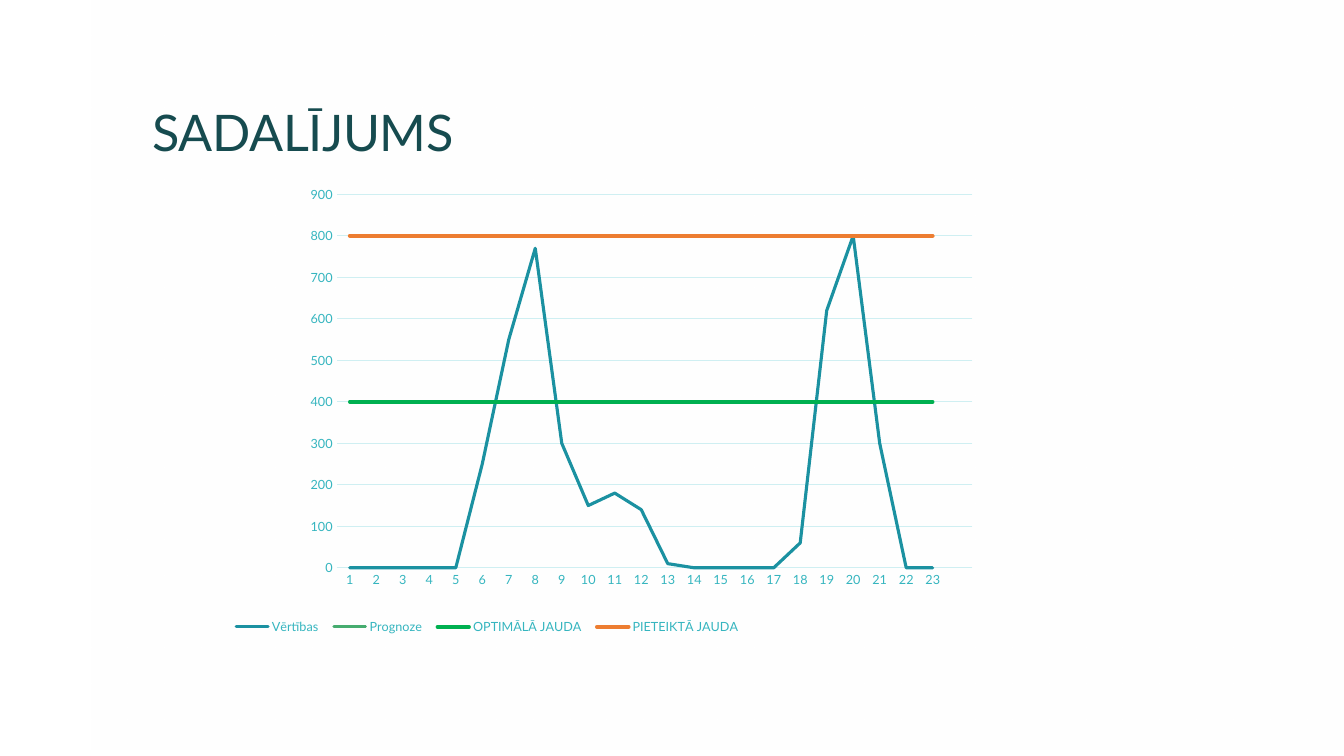
from dataclasses import dataclass

from lxml import etree
from pptx import Presentation
from pptx.chart.data import CategoryChartData
from pptx.dml.color import RGBColor
from pptx.enum.chart import XL_CHART_TYPE, XL_LEGEND_POSITION, XL_TICK_MARK
from pptx.enum.shapes import MSO_SHAPE
from pptx.enum.text import MSO_ANCHOR, PP_ALIGN
from pptx.oxml.ns import qn
from pptx.util import Cm, Pt

LINE_CHART = XL_CHART_TYPE.LINE
LEGEND_BOTTOM = XL_LEGEND_POSITION.BOTTOM
NO_TICKS = XL_TICK_MARK.NONE
RECTANGLE = MSO_SHAPE.RECTANGLE
ANCHOR_BOTTOM = MSO_ANCHOR.BOTTOM
ALIGN_LEFT = PP_ALIGN.LEFT

FONT = "Lato"
COLORS = {
    "white": "FFFFFF",
    "dark_teal": "164B4F",
    "label": "35B5BF",
    "grid": "CFEFF2",
    "values": "1B91A1",
    "forecast": "46AC6F",
    "optimal": "00B050",
    "declared": "ED7D31",
}
HOURS = 24
MEASURED_HOURS = 23


@dataclass
class PowerSeries:
    name: str
    values: list
    color: str
    width: float


POWER_SERIES = [
    PowerSeries("Vērtības",
                [0, 0, 0, 0, 0, 250, 550, 770, 300, 150, 180, 140,
                 10, 0, 0, 0, 0, 60, 620, 800, 300, 0, 0, None],
                "values", 2.25),
    PowerSeries("Prognoze", [None] * HOURS, "forecast", 2),
    PowerSeries("OPTIMĀLĀ JAUDA", [400] * MEASURED_HOURS + [None], "optimal", 2.5),
    PowerSeries("PIETEIKTĀ JAUDA", [800] * MEASURED_HOURS + [None], "declared", 2.75),
]


def rgb(color: str) -> RGBColor:
    return RGBColor.from_string(COLORS[color])


def style_font(font, size: float, color: str) -> None:
    for attribute, value in {"name": FONT, "size": Pt(size), "bold": False}.items():
        setattr(font, attribute, value)
    font.color.rgb = rgb(color)


def style_line(line, color: str, width: float) -> None:
    line.color.rgb = rgb(color)
    line.width = Pt(width)


def place_inside_chart(parent, index: int, settings: dict) -> None:
    """Give a chart part a manual layout in fractions of the chart."""
    for old_layout in parent.findall(qn("c:layout")):
        parent.remove(old_layout)
    layout = etree.Element(qn("c:layout"))
    manual = etree.SubElement(layout, qn("c:manualLayout"))
    for tag, value in settings.items():
        etree.SubElement(manual, qn(f"c:{tag}")).set("val", str(value))
    parent.insert(index, layout)


def add_veil(slide) -> None:
    veil = slide.shapes.add_shape(RECTANGLE, Cm(2.31), Cm(0), Cm(31.55), Cm(19.05))
    veil.shadow.inherit = False
    veil.line.fill.background()
    veil.fill.gradient()
    veil.fill.gradient_angle = 270
    for stop in veil.fill.gradient_stops:
        stop.color.rgb = rgb("white")
    for color, opacity in zip(veil.fill._xPr.iter(qn("a:srgbClr")), (60, 0)):
        etree.SubElement(color, qn("a:alpha")).set("val", str(opacity * 1000))


def add_title(slide, text: str) -> None:
    title = slide.shapes.add_textbox(Cm(3.6), Cm(1.05), Cm(28.14), Cm(3.18))
    frame = title.text_frame
    for attribute, value in {"word_wrap": True, "vertical_anchor": ANCHOR_BOTTOM}.items():
        setattr(frame, attribute, value)
    paragraph = frame.paragraphs[0]
    for attribute, value in {"alignment": ALIGN_LEFT, "line_spacing": 0.9}.items():
        setattr(paragraph, attribute, value)
    run = paragraph.add_run()
    run.text = text
    style_font(run.font, 36, "dark_teal")
    run.font._element.set("spc", "-30")


def add_power_chart(slide) -> None:
    data = CategoryChartData()
    # The last hour has neither a label nor values
    data.categories = [str(hour) for hour in range(1, MEASURED_HOURS + 1)] + [""]
    for series in POWER_SERIES:
        data.add_series(series.name, series.values)
    chart = slide.shapes.add_chart(
        LINE_CHART, Cm(5.67), Cm(4.52), Cm(24.03), Cm(11.81), data).chart
    chart.has_title = False
    style_font(chart.font, 10, "dark_teal")

    # Series lines
    chart.plots[0].vary_by_categories = False
    for drawn, series in zip(chart.plots[0].series, POWER_SERIES):
        drawn.smooth = False
        style_line(drawn.format.line, series.color, series.width)
        drawn.format.line._get_or_add_ln().set("cap", "rnd")

    # Axes
    hour_axis, power_axis = chart.category_axis, chart.value_axis
    for axis in (hour_axis, power_axis):
        for attribute in ("major_tick_mark", "minor_tick_mark"):
            setattr(axis, attribute, NO_TICKS)
        style_font(axis.tick_labels.font, 9, "label")
    style_line(hour_axis.format.line, "grid", 0.75)
    power_axis.format.line.fill.background()
    for attribute, value in {"minimum_scale": 0, "maximum_scale": 900,
                             "major_unit": 100, "has_major_gridlines": True}.items():
        setattr(power_axis, attribute, value)
    style_line(power_axis.major_gridlines.format.line, "grid", 0.75)

    # Points stand in the middle of each hour
    axis_xml = power_axis._element
    if axis_xml.find(qn("c:crossBetween")) is None:
        between = etree.Element(qn("c:crossBetween"))
        between.set("val", "between")
        axis_xml.find(qn("c:crosses")).addnext(between)

    # Legend and plot area
    chart.has_legend = True
    chart.legend.position = LEGEND_BOTTOM
    chart.legend.include_in_layout = False
    style_font(chart.legend.font, 9, "label")
    place_inside_chart(chart.legend._element, 1,
                       {"xMode": "edge", "yMode": "edge",
                        "x": 0, "y": 0.92, "w": 0.55, "h": 0.07})
    place_inside_chart(chart._chartSpace.find(f".//{qn('c:plotArea')}"), 0,
                       {"layoutTarget": "inner", "xMode": "edge", "yMode": "edge",
                        "x": 0.117, "y": 0.032, "w": 0.667, "h": 0.797})


def main() -> None:
    presentation = Presentation()
    presentation.slide_width, presentation.slide_height = Cm(33.87), Cm(19.05)
    slide = presentation.slides.add_slide(presentation.slide_layouts[6])
    slide.background.fill.solid()
    slide.background.fill.fore_color.rgb = rgb("white")
    add_veil(slide)
    add_title(slide, "SADALĪJUMS")
    add_power_chart(slide)
    presentation.save("out.pptx")


if __name__ == "__main__":
    main()
